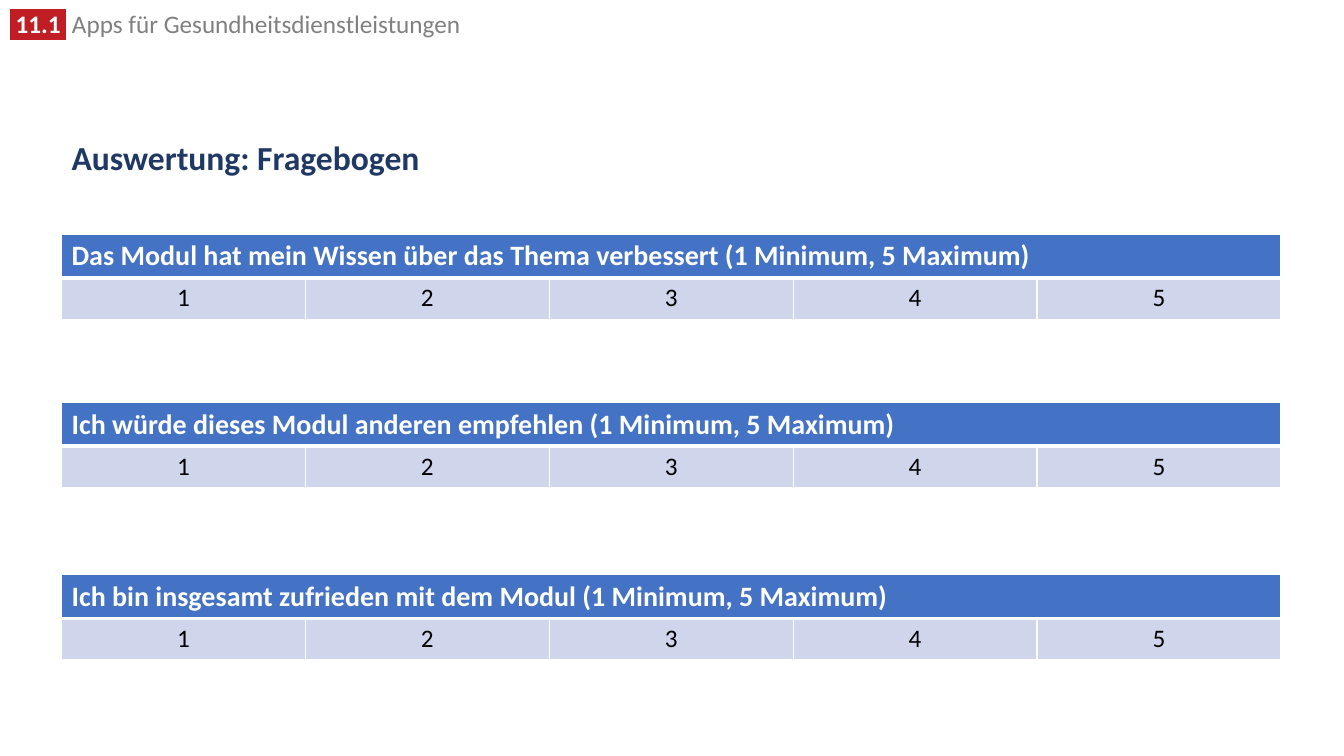
from lxml import etree
from pptx import Presentation, util as u
from pptx.dml.color import RGBColor
from pptx.enum import text
from pptx.oxml.ns import qn

HUES = {"white": "FFFFFF", "red": "C01E24", "gray": "808080", "navy": "203864",
        "blue": "4472C4", "pale": "CFD5EA", "black": "000000"}
LEFT, WIDE = 1.55, 30.73


class Page:
    def __init__(self, deck, font="Calibri"):
        self.font = font
        self.slide = deck.slides.add_slide(deck.slide_layouts[5])

    def run(self, para, words, size, hue, bold=False, mark=None):
        run = para.add_run()
        run.text = words
        font = run.font
        font.name, font.size, font.bold = self.font, u.Pt(size), bold
        font.color.rgb = RGBColor.from_string(HUES[hue])
        if mark:
            light = etree.Element(qn("a:highlight"))
            etree.SubElement(light, qn("a:srgbClr"), val=HUES[mark])
            font._element.find(qn("a:solidFill")).addnext(light)

    def header(self, num, words):
        box = self.slide.shapes.add_textbox(u.Cm(0), u.Cm(0.23), u.Cm(19.1), u.Cm(0.88))
        frame = box.text_frame
        frame.word_wrap = True
        para = frame.paragraphs[0]
        para.line_spacing = 0.8
        self.run(para, f" {num} ", 18, "white", True, "red")
        self.run(para, f" {words}", 18, "gray")

    def title(self, words):
        box = self.slide.shapes.title
        box.left, box.top, box.width, box.height = map(u.Cm, (LEFT, 3, WIDE, 2.03))
        frame = box.text_frame
        frame.auto_size = text.MSO_AUTO_SIZE.NONE
        frame.vertical_anchor = text.MSO_ANCHOR.MIDDLE
        para = frame.paragraphs[0]
        para.alignment = text.PP_ALIGN.LEFT
        para.line_spacing = 0.9
        self.run(para, words, 24, "navy", True)

    def cell(self, cell, hue, **widths):
        cell.fill.solid()
        cell.fill.fore_color.rgb = RGBColor.from_string(HUES[hue])
        props = cell._tc.get_or_add_tcPr()
        for i, side in enumerate("LRTB"):
            line = etree.Element(qn(f"a:ln{side}"), w=str(u.Pt(widths.get(side, 1))))
            fill = etree.SubElement(line, qn("a:solidFill"))
            etree.SubElement(fill, qn("a:srgbClr"), val=HUES["white"])
            props.insert(i, line)

    def scale(self, top, words, steps=5):
        grid = self.slide.shapes.add_table(
            2, steps, u.Cm(LEFT), u.Cm(top), u.Cm(WIDE), u.Cm(2.1)).table
        # Question row
        for col in range(steps):
            self.cell(grid.cell(0, col), "blue", B=3)
        grid.cell(0, 0).merge(grid.cell(0, steps - 1))
        self.run(grid.cell(0, 0).text_frame.paragraphs[0], words, 20, "white", True)
        # Rating row
        for col in range(steps):
            cell = grid.cell(1, col)
            self.cell(cell, "pale", T=3)
            para = cell.text_frame.paragraphs[0]
            para.alignment = text.PP_ALIGN.CENTER
            self.run(para, str(col + 1), 18, "black")


def main():
    deck = Presentation()
    deck.slide_width, deck.slide_height = u.Cm(33.87), u.Cm(19.05)
    page = Page(deck)

    # Heading
    page.header("11.1", "Apps für Gesundheitsdienstleistungen")
    page.title("Auswertung: Fragebogen")

    # Questions
    asks = [(5.9, "Das Modul hat mein Wissen über das Thema verbessert"),
            (10.14, "Ich würde dieses Modul anderen empfehlen"),
            (14.48, "Ich bin insgesamt zufrieden mit dem Modul")]
    for top, ask in asks:
        page.scale(top, f"{ask} (1 Minimum, 5 Maximum)")

    deck.save("out.pptx")


if __name__ == "__main__":
    main()
